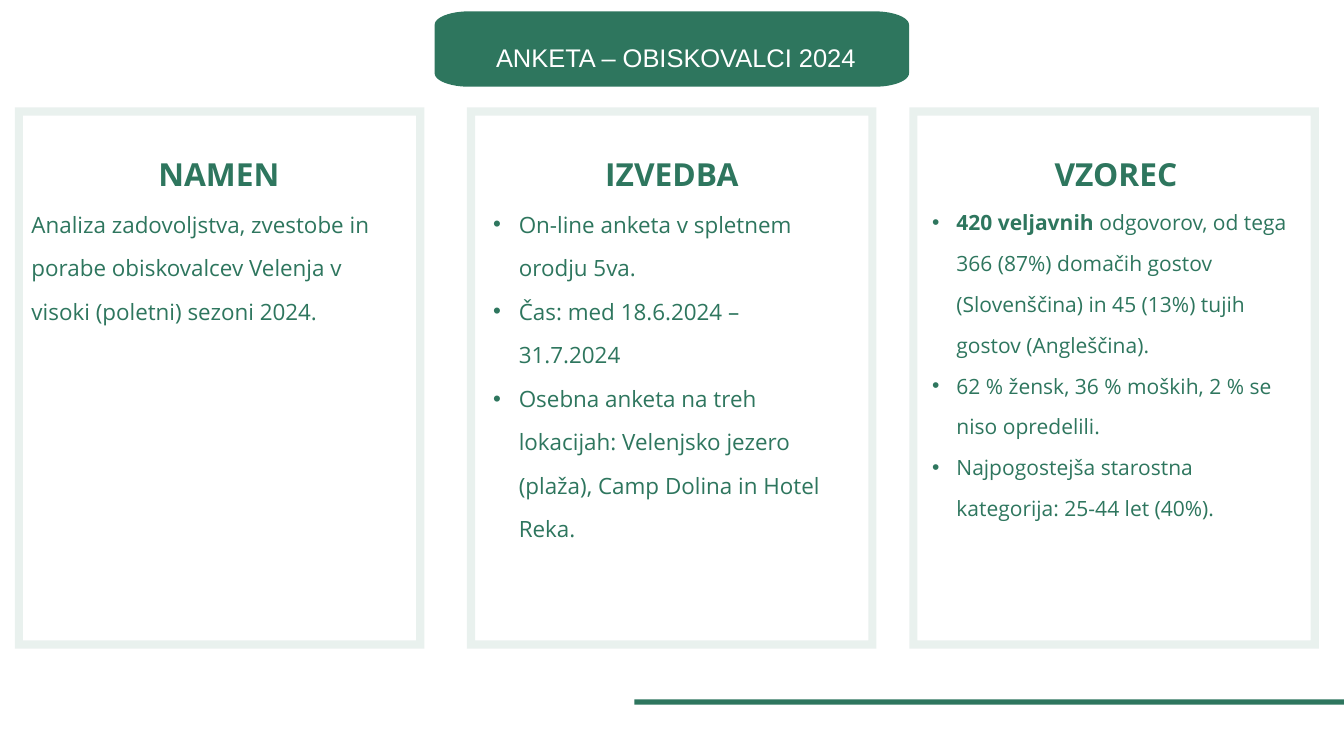
import math
from dataclasses import dataclass
from lxml import etree
from pptx import Presentation
from pptx.dml.color import RGBColor
from pptx.enum import shapes, text
from pptx.oxml import ns
from pptx.util import Cm, Pt


@dataclass(frozen=True)
class Theme:
    green: RGBColor = RGBColor(0x2E, 0x76, 0x5E)
    white: RGBColor = RGBColor(0xFF, 0xFF, 0xFF)
    title_font: str = "Arial"
    body_font: str = "Open Sans"
    title_size: float = 27.3
    heading_size: float = 34
    body_size: float = 24
    small_size: float = 22.5
    frame_alpha: int = 10000


T = Theme()

COLUMNS = [
    dict(frame=0.56, left=1.19, width=14.17, heading="NAMEN", size=T.body_size, indent=None, items=[
        [("Analiza zadovoljstva, zvestobe in porabe obiskovalcev Velenja v visoki (poletni) sezoni 2024.", False)],
    ]),
    dict(frame=17.65, left=18.64, width=13.51, heading="IZVEDBA", size=T.body_size, indent=0.97, items=[
        [("On-line anketa v spletnem orodju 5va.", False)],
        [("Čas: med 18.6.2024 – 31.7.2024", False)],
        [("Osebna anketa na treh lokacijah: Velenjsko jezero (plaža), Camp Dolina in Hotel Reka.", False)],
    ]),
    dict(frame=34.37, left=35.18, width=14, heading="VZOREC", size=T.small_size, indent=0.92, items=[
        [("420 veljavnih ", True),
         ("odgovorov, od tega 366 (87%) domačih gostov (Slovenščina) in 45 (13%) tujih gostov (Angleščina).", False)],
        [("62 % žensk, 36 % moških, 2 % se niso opredelili.", False)],
        [("Najpogostejša starostna kategorija: 25-44 let (40%).", False)],
    ]),
]


def assign(obj, **values):
    for name, value in values.items():
        setattr(obj, name, value)


def place(sp, left, top, width, height):
    assign(sp, left=Cm(left), top=Cm(top), width=Cm(width), height=Cm(height))


def paint(sp, color):
    sp.shadow.inherit = False
    sp.fill.solid()
    sp.fill.fore_color.rgb = color
    sp.line.fill.background()


def set_bullet(p, indent):
    pr = p._p.get_or_add_pPr()
    pr.set("marL", str(Cm(0.97) if indent else 0))
    pr.set("indent", str(-Cm(indent) if indent else 0))
    if not indent:
        etree.SubElement(pr, ns.qn("a:buNone"))
        return
    color = etree.SubElement(pr, ns.qn("a:buClr"))
    etree.SubElement(color, ns.qn("a:srgbClr"), val=str(T.green))
    etree.SubElement(pr, ns.qn("a:buFont"), typeface="Arial")
    etree.SubElement(pr, ns.qn("a:buChar"), char="•")


def write(sp, items, size, spacing, font=T.body_font, color=T.green, align=text.PP_ALIGN.LEFT, indent=None):
    tf = sp.text_frame
    assign(tf, word_wrap=True, auto_size=text.MSO_AUTO_SIZE.NONE, vertical_anchor=text.MSO_ANCHOR.TOP,
           margin_left=0, margin_top=0, margin_right=0, margin_bottom=0)
    for i, runs in enumerate(items):
        p = tf.add_paragraph() if i else tf.paragraphs[0]
        set_bullet(p, indent)
        assign(p, alignment=align, line_spacing=spacing, space_before=Pt(0), space_after=Pt(0))
        for words, bold in runs:
            r = p.add_run()
            r.text = words
            assign(r.font, name=font, size=Pt(size), bold=bold)
            r.font.color.rgb = color


def add_frame(s, left):
    sp = s.shapes.add_shape(shapes.MSO_SHAPE.FRAME, Cm(left), Cm(4.06), Cm(15.48), Cm(20.46))
    sp.adjustments[0] = 0.02
    paint(sp, T.green)
    color = sp.fill._xPr.find(".//" + ns.qn("a:srgbClr"))
    etree.SubElement(color, ns.qn("a:alpha"), val=str(T.frame_alpha))


def add_banner(s, left, top, width, height, rx, ry, steps=12):
    corners = [(left + width - rx, top + height - ry), (left + rx, top + height - ry),
               (left + rx, top + ry), (left + width - rx, top + ry)]
    points = []
    for quarter, (cx, cy) in enumerate(corners):
        for step in range(steps + 1):
            angle = math.pi / 2 * (quarter + step / steps)
            points.append((Cm(cx + rx * math.cos(angle)), Cm(cy + ry * math.sin(angle))))
    builder = s.shapes.build_freeform(*points[0])
    builder.add_line_segments(points[1:], close=True)
    paint(builder.convert_to_shape(), T.green)


def add_title(s, words):
    add_banner(s, 16.43, 0.43, 17.93, 2.85, 1.3, 0.51)
    sp = s.shapes.title
    place(sp, 18.62, 1.14, 13.84, 3.28)
    write(sp, [[(words, False)]], T.title_size, 1.4, T.title_font, T.white, text.PP_ALIGN.CENTER)
    s.shapes._spTree.append(sp._element)


def add_column(s, body, column):
    add_frame(s, column["frame"])
    left, width = column["left"], column["width"]
    heading = s.shapes.add_textbox(Cm(left), Cm(5.56), Cm(width), Cm(1.75))
    write(heading, [[(column["heading"], True)]], T.heading_size, 1.2, align=text.PP_ALIGN.CENTER)
    place(body, left, 7.34, width - 0.25, 16.7)
    write(body, column["items"], column["size"], 1.62, indent=column["indent"])


def add_rule(s):
    sp = s.shapes.add_shape(shapes.MSO_SHAPE.RECTANGLE, Cm(23.98), Cm(26.44), Cm(26.82), Cm(0.2))
    paint(sp, T.green)


def main():
    prs = Presentation()
    assign(prs, slide_width=Cm(50.8), slide_height=Cm(28.58))
    s = prs.slides.add_slide(prs.slide_layouts[4])
    *bodies, spare = list(s.placeholders)[1:]
    spare._element.getparent().remove(spare._element)
    for body, column in zip(bodies, COLUMNS):
        add_column(s, body, column)
    add_rule(s)
    add_title(s, "ANKETA – OBISKOVALCI 2024")
    prs.save("out.pptx")


if __name__ == "__main__":
    main()
